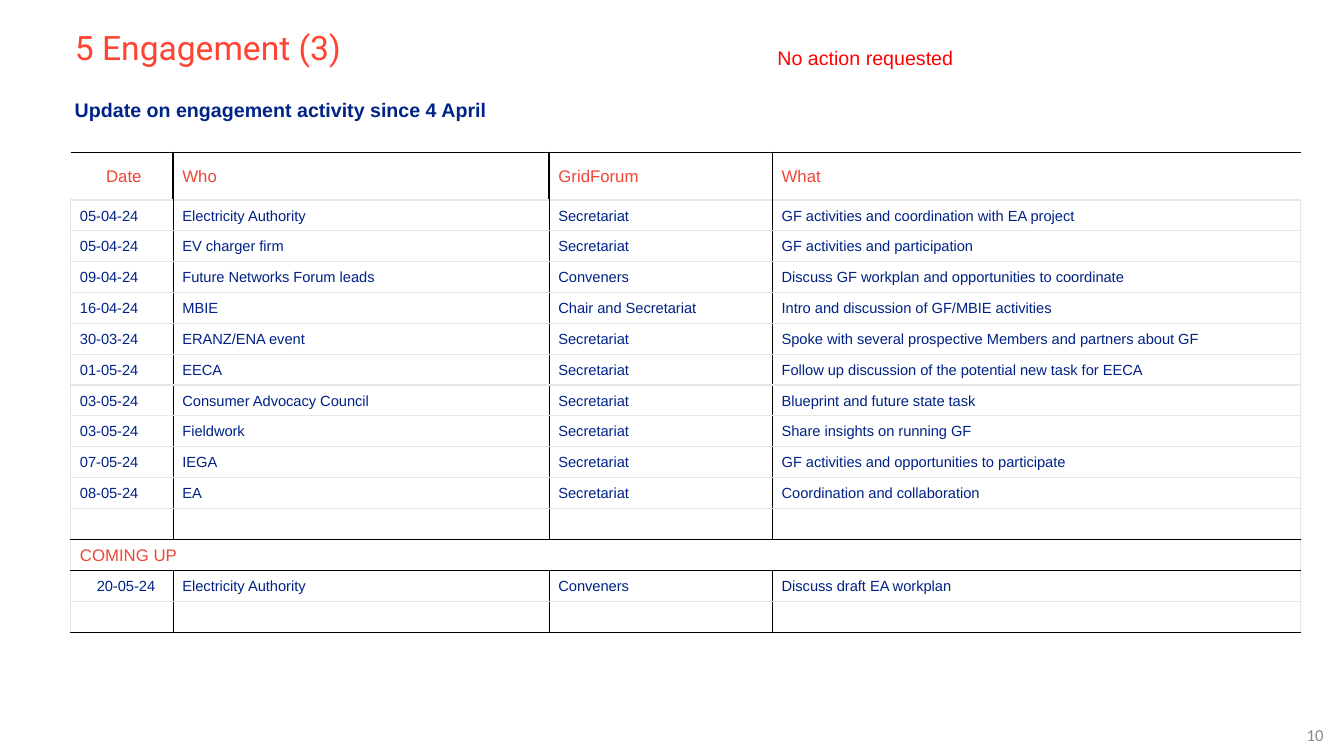
from pptx import Presentation
from pptx.dml.color import RGBColor
from pptx.enum.text import MSO_ANCHOR, PP_ALIGN
from pptx.util import Pt
from lxml.etree import SubElement

NS = "{http://schemas.openxmlformats.org/drawingml/2006/main}"
PLAIN = "{2D5ABB26-0587-4C30-8999-92F81FD0307C}"
BLACK, GREY, NAVY, RED = "000000", "E7E6E6", "002286", "EF4637"

TITLE = "5 Engagement (3)"
INTRO = "Update on engagement activity since 4 April"
ACTION = "No action requested"
PAGE = "10"
HEAD = ("Date", "Who", "GridForum", "What")
DONE = [
    ("05-04-24", "Electricity Authority", "Secretariat", "GF activities and coordination with EA project"),
    ("05-04-24", "EV charger firm", "Secretariat", "GF activities and participation"),
    ("09-04-24", "Future Networks Forum leads", "Conveners", "Discuss GF workplan and opportunities to coordinate"),
    ("16-04-24", "MBIE", "Chair and Secretariat", "Intro and discussion of GF/MBIE activities"),
    ("30-03-24", "ERANZ/ENA event", "Secretariat", "Spoke with several prospective Members and partners about GF"),
    ("01-05-24", "EECA", "Secretariat", "Follow up discussion of the potential new task for EECA"),
    ("03-05-24", "Consumer Advocacy Council", "Secretariat", "Blueprint and future state task"),
    ("03-05-24", "Fieldwork", "Secretariat", "Share insights on running GF"),
    ("07-05-24", "IEGA", "Secretariat", "GF activities and opportunities to participate"),
    ("08-05-24", "EA", "Secretariat", "Coordination and collaboration"),
]
NEXT = ("20-05-24", "Electricity Authority", "Conveners", "Discuss draft EA workplan")
BLANK = ("",) * 4
ROWS = [HEAD, *DONE, BLANK, ("COMING UP", "", "", ""), NEXT, BLANK]
SPAN = len(DONE) + 2
LAST = len(ROWS) - 1
WIDTHS = (73.2, 268.6, 159.5, 377.3)
HEAD_H, ROW_H = 34.2, 22.05


def color(code):
    return RGBColor.from_string(code)


def put(frame, text, size=10.5, fill=NAVY, font="Arial", bold=False,
        align=PP_ALIGN.LEFT, indent=6, space=None):
    """Write one formatted paragraph into a text frame."""
    para = frame.paragraphs[0]
    para.alignment = align
    para.line_spacing = space
    props = para._p.get_or_add_pPr()
    props.set("marL", str(Pt(indent)))
    props.set("indent", "0")
    run = para.add_run()
    run.text = text
    run.font.size, run.font.name, run.font.bold = Pt(size), font, bold
    run.font.color.rgb = color(fill)


def box(slide, place, text, anchor=MSO_ANCHOR.TOP, pad=3.6, **style):
    frame = slide.shapes.add_textbox(*map(Pt, place)).text_frame
    frame.word_wrap = True
    frame.vertical_anchor = anchor
    frame.margin_top = frame.margin_bottom = Pt(pad)
    put(frame, text, **style)


def edge(cell, side, code, width):
    """Draw one border of a cell; call in the order L, R, T, B."""
    props = cell._tc.get_or_add_tcPr()
    line = SubElement(props, NS + "ln" + side, w=str(Pt(width)))
    fill = SubElement(line, NS + "solidFill")
    SubElement(fill, NS + "srgbClr", val=code)


def rule(row):
    """Colour of the horizontal line above a row."""
    return BLACK if row in (0, SPAN, SPAN + 1, LAST + 1) else GREY


def frame_cell(cell, row, col):
    for side, outer in (("L", col == 0), ("R", col == 3)):
        inner = not outer and row != SPAN
        if inner:
            edge(cell, side, BLACK, 0.75 if row else 1)
        elif outer and row or row == SPAN and col == 0:
            edge(cell, side, GREY, 0.75)
    edge(cell, "T", rule(row), 1)
    edge(cell, "B", rule(row + 1), 1)
    cell.fill.background()


def fill_cell(cell, text, row, col):
    cell.vertical_anchor = MSO_ANCHOR.MIDDLE
    cell.margin_left = cell.margin_right = cell.margin_top = Pt(0.7)
    cell.margin_bottom = 0
    big = row in (0, SPAN)
    mid = col == 0 and row in (0, SPAN + 1)
    put(cell.text_frame, text, size=12 if big else 10.5, fill=RED if big else NAVY,
        align=PP_ALIGN.CENTER if mid else PP_ALIGN.LEFT,
        indent=3 if mid and row == 0 else 6)


def add_log(slide):
    height = HEAD_H + ROW_H * LAST
    shape = slide.shapes.add_table(len(ROWS), 4, Pt(50.4), Pt(108.7), Pt(sum(WIDTHS)), Pt(height))
    table = shape.table
    table._tbl.tblPr.find(NS + "tableStyleId").text = PLAIN
    table.first_row = table.horz_banding = False
    for col, width in enumerate(WIDTHS):
        table.columns[col].width = Pt(width)
    table.cell(SPAN, 0).merge(table.cell(SPAN, 3))
    for row, texts in enumerate(ROWS):
        table.rows[row].height = Pt(ROW_H if row else HEAD_H)
        for col, text in enumerate(texts):
            cell = table.cell(row, col)
            if not cell.is_spanned:
                fill_cell(cell, text, row, col)
            frame_cell(cell, row, col)


def main():
    deck = Presentation()
    deck.slide_width, deck.slide_height = Pt(960), Pt(540)
    slide = deck.slides.add_slide(deck.slide_layouts[5])
    title = slide.shapes.title
    title.left, title.top, title.width, title.height = map(Pt, (40.3, 8.6, 878.4, 53.3))
    title.text_frame.vertical_anchor = MSO_ANCHOR.MIDDLE
    put(title.text_frame, TITLE, size=24, fill="FF4331", font="Roboto", space=0.9)
    box(slide, (40.3, 66.2, 859, 41.8), INTRO, size=14, fill="002387", bold=True)
    add_log(slide)
    box(slide, (542.2, 25.9, 387.4, 31.7), ACTION, pad=7.2, size=14, fill="FF0000")
    box(slide, (907.2, 510.5, 45.4, 28.8), PAGE, anchor=MSO_ANCHOR.MIDDLE, size=12,
        fill="888888", font="Calibri", align=PP_ALIGN.RIGHT, indent=0)
    deck.save("out.pptx")


if __name__ == "__main__":
    main()
